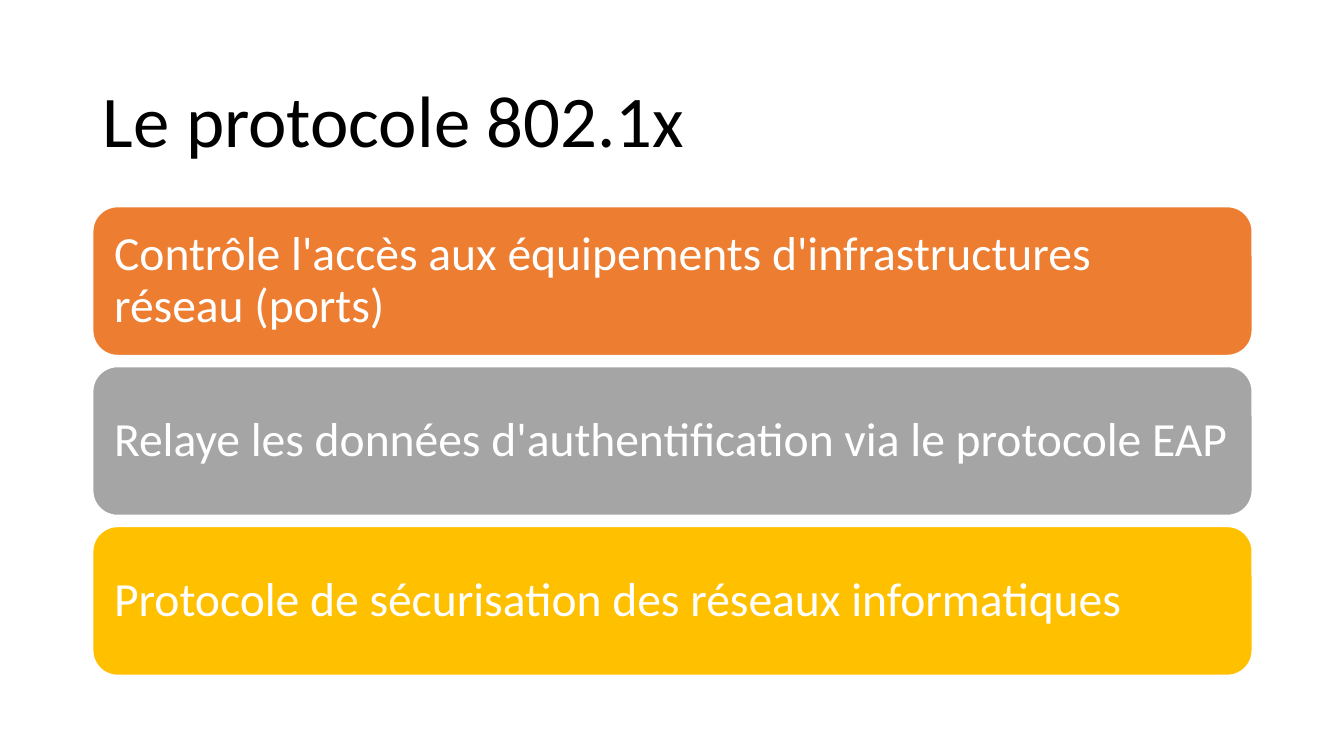
from dataclasses import dataclass

from pptx import Presentation
from pptx.dml.color import RGBColor as Rgb
from pptx.enum.shapes import MSO_SHAPE as Preset
from pptx.enum.text import MSO_ANCHOR as Anchor, MSO_AUTO_SIZE as AutoSize, PP_ALIGN as Align
from pptx.util import Inches, Pt


@dataclass(frozen=True)
class Theme:
    font: str = "Calibri"
    ink: str = "000000"
    paper: str = "FFFFFF"
    accents: tuple = ("ED7D31", "A5A5A5", "FFC000")
    title_size: int = 52
    band_size: int = 34
    outline: int = 1


@dataclass(frozen=True)
class Box:
    left: float
    top: float
    width: float
    height: float

    def place(self, shape):
        for side in ("left", "top", "width", "height"):
            setattr(shape, side, Inches(getattr(self, side)))

    def rows(self, count, gap):
        """Split into equal rows separated by gap."""
        height = (self.height - gap * (count - 1)) / count
        return [Box(self.left, self.top + i * (height + gap), self.width, height)
                for i in range(count)]


THEME = Theme()
SLIDE_WIDTH, SLIDE_HEIGHT = 13.33, 7.5
MARGIN = 0.92
CONTENT_WIDTH = 11.5
TITLE_BOX = Box(MARGIN, 0.61, CONTENT_WIDTH, 1.24)
BANDS_BOX = Box(MARGIN, 2.05, CONTENT_WIDTH, 4.65)
BAND_GAP = 0.11
BAND_INSET = 0.14

TITLE = "Le protocole 802.1x"
ROLES = (
    "Contrôle l'accès aux équipements d'infrastructures réseau (ports)",
    "Relaye les données d'authentification via le protocole EAP",
    "Protocole de sécurisation des réseaux informatiques",
)


def apply(target, formats):
    for name, value in formats.items():
        setattr(target, name, value)


def write(shape, text, size, color, inset):
    frame = shape.text_frame
    frame.text = text
    apply(frame, {"word_wrap": True, "auto_size": AutoSize.NONE,
                  "vertical_anchor": Anchor.MIDDLE})
    apply(frame, {f"margin_{side}": Inches(inset)
                  for side in ("left", "top", "right", "bottom")})
    paragraph = frame.paragraphs[0]
    apply(paragraph, {"alignment": Align.LEFT, "line_spacing": 0.9})
    font = paragraph.runs[0].font
    apply(font, {"name": THEME.font, "size": Pt(size)})
    font.color.rgb = Rgb.from_string(color)


def add_title(slide, box):
    title = slide.shapes.title
    box.place(title)
    write(title, TITLE, THEME.title_size, THEME.ink, 0.1)


def add_bands(slide, box):
    rows = box.rows(len(ROLES), BAND_GAP)
    for role, accent, row in zip(ROLES, THEME.accents, rows):
        band = slide.shapes.add_shape(Preset.ROUNDED_RECTANGLE, 0, 0, 0, 0)
        row.place(band)
        band.shadow.inherit = False
        band.fill.solid()
        band.fill.fore_color.rgb = Rgb.from_string(accent)
        band.line.color.rgb = Rgb.from_string(THEME.paper)
        band.line.width = Pt(THEME.outline)
        write(band, role, THEME.band_size, THEME.paper, BAND_INSET)


def main():
    deck = Presentation()
    apply(deck, {"slide_width": Inches(SLIDE_WIDTH), "slide_height": Inches(SLIDE_HEIGHT)})
    slide = deck.slides.add_slide(deck.slide_layouts.get_by_name("Title Only"))
    add_title(slide, TITLE_BOX)
    add_bands(slide, BANDS_BOX)
    deck.save("out.pptx")


if __name__ == "__main__":
    main()
